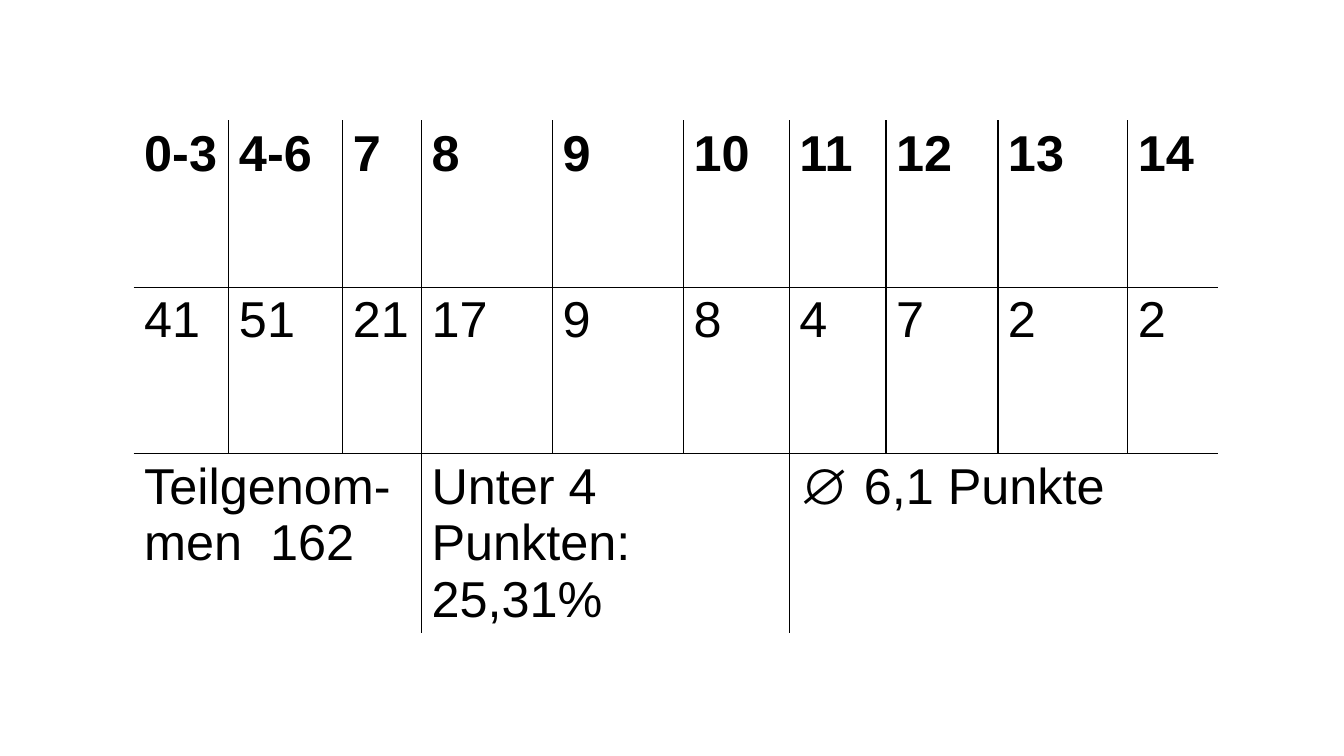
"""Build a slide with a table of exam points, participants and average."""
from lxml import etree
from pptx import Presentation, util as u
from pptx.dml import color
from pptx.oxml import ns

WIDTHS = [67.7, 81.4, 56.2, 93.6, 93.6, 75.6, 69.1, 79.9, 75.6, 16.6, 64.1]
HEIGHTS = [118.8, 118.8, 128.9]
POINTS = ["0-3", "4-6", "7", "8", "9", "10", "11", "12", "13", "", "14"]
COUNTS = ["41", "51", "21", "17", "9", "8", "4", "7", "2", "", "2"]
SUMMARY = {
    0: (3, "Teilgenom-men  162"),
    3: (3, "Unter 4 Punkten:\n25,31%"),
    6: (5, "∅ 6,1 Punkte"),
}
GRID_LINES = {1, 2, 3, 4, 5, 6, 7, 8, 10}
SUMMARY_LINES = {3, 6}


def rgb(value):
    return color.RGBColor.from_string(value)


class Sheet:
    font, size = "Arial", 36
    ink, paper = "000000", "FFFFFF"

    def __init__(self, presentation):
        self.slide = presentation.slides.add_slide(presentation.slide_layouts[6])

    def table(self, left, top, widths, heights):
        shape = self.slide.shapes.add_table(
            len(heights), len(widths), u.Pt(left), u.Pt(top),
            u.Pt(sum(widths)), u.Pt(sum(heights)))
        table = shape.table
        table.first_row = table.horz_banding = False
        for column, width in zip(table.columns, widths):
            column.width = u.Pt(width)
        for row, height in zip(table.rows, heights):
            row.height = u.Pt(height)
        return table

    def cell(self, cell, words, bold, edges):
        self.borders(cell, edges)
        cell.fill.solid()
        cell.fill.fore_color.rgb = rgb(self.paper)
        cell.text_frame.text = words
        for paragraph in cell.text_frame.paragraphs:
            for run in paragraph.runs:
                run.font.name = self.font
                run.font.size = u.Pt(self.size)
                run.font.bold = bold
                run.font.color.rgb = rgb(self.ink)

    def borders(self, cell, edges):
        properties = cell._tc.get_or_add_tcPr()
        for side, visible in zip("LRTB", edges):
            line = etree.SubElement(properties, ns.qn(f"a:ln{side}"), w=str(u.Pt(1)))
            fill = etree.SubElement(line, ns.qn("a:solidFill"))
            etree.SubElement(fill, ns.qn("a:srgbClr"),
                             val=self.ink if visible else self.paper)


def main():
    presentation = Presentation()
    presentation.slide_width, presentation.slide_height = u.Pt(960), u.Pt(540)
    sheet = Sheet(presentation)
    table = sheet.table(95.8, 86.4, WIDTHS, HEIGHTS)
    summary = [SUMMARY.get(column, (1, "")) for column in range(len(WIDTHS))]
    rows = [[(1, words) for words in POINTS], [(1, words) for words in COUNTS], summary]
    last = len(rows) - 1
    for row, entries in enumerate(rows):
        lines = SUMMARY_LINES if row == last else GRID_LINES
        for column, (span, words) in enumerate(entries):
            edges = (column in lines, column + span in lines, row > 0, row < last)
            cell = table.cell(row, column)
            sheet.cell(cell, words, row == 0, edges)
    for column, (span, words) in SUMMARY.items():
        table.cell(last, column).merge(table.cell(last, column + span - 1))
    presentation.save("out.pptx")


if __name__ == "__main__":
    main()
